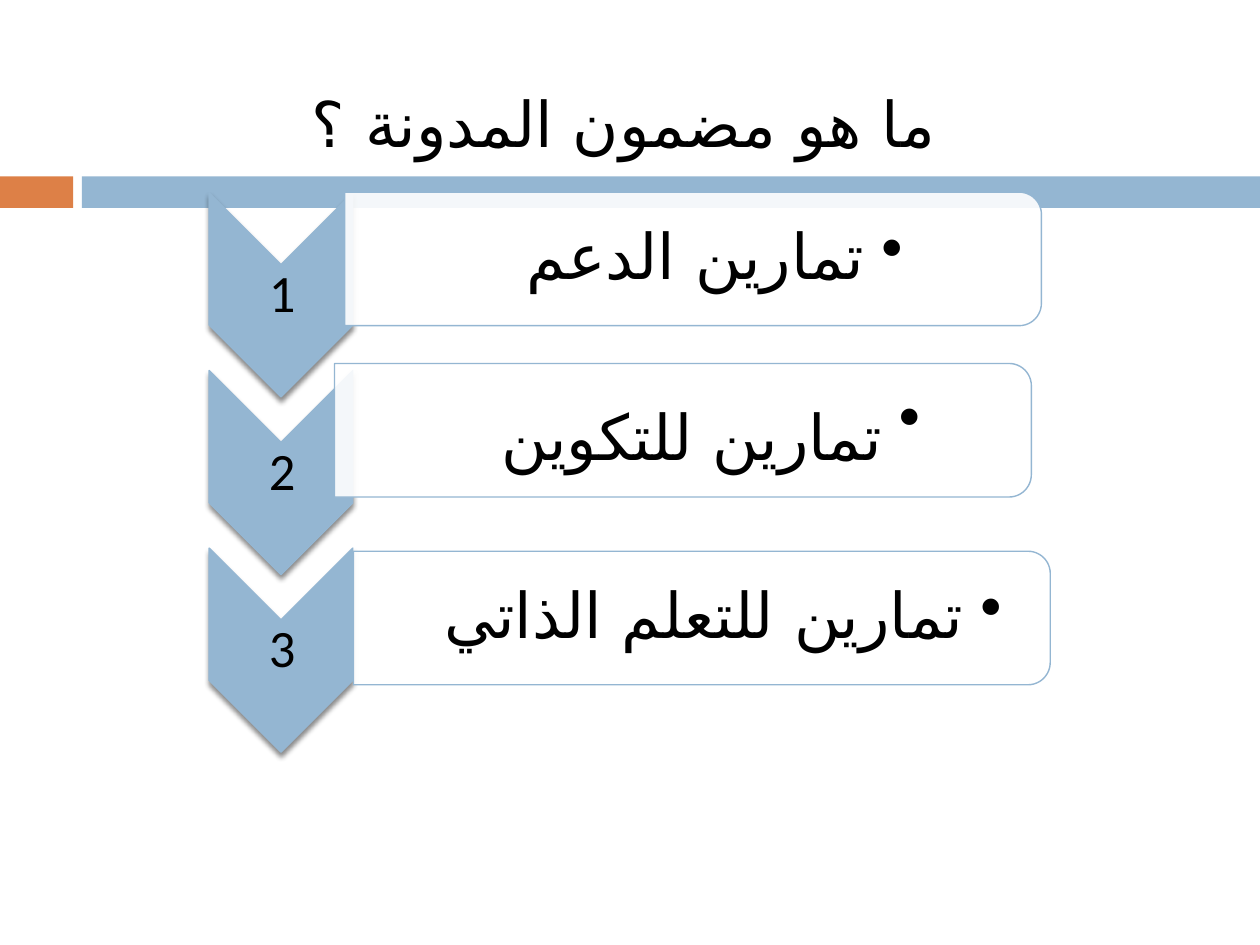
from lxml import etree
from pptx import Presentation
from pptx.dml.color import RGBColor
from pptx.enum.shapes import MSO_SHAPE
from pptx.enum.text import MSO_ANCHOR, PP_ALIGN
from pptx.oxml import parse_xml
from pptx.oxml.ns import nsdecls, qn
from pptx.util import Inches, Pt

BLUE, ORANGE, WHITE, BLACK = "94B6D2", "DD8047", "FFFFFF", "000000"
LATIN_FONT, ARABIC_FONT = "Calibri", "DejaVu Sans"
SHADOW = (
    f'<a:effectLst {nsdecls("a")}><a:outerShdw blurRad="38100" dist="30480" '
    'dir="5400000" rotWithShape="0"><a:srgbClr val="000000">'
    '<a:alpha val="45000"/></a:srgbClr></a:outerShdw></a:effectLst>'
)

presentation = Presentation()
presentation.slide_width = Inches(10)
presentation.slide_height = Inches(7.5)
slide = presentation.slides.add_slide(presentation.slide_layouts[6])


def add_block(kind, box, fill, line=None):
    shape = slide.shapes.add_shape(kind, *map(Inches, box))
    shape.shadow.inherit = False
    shape.fill.solid()
    shape.fill.fore_color.rgb = RGBColor.from_string(fill)
    if line:
        shape.line.color.rgb = RGBColor.from_string(line)
        shape.line.width = Pt(0.79)
    else:
        shape.line.fill.background()
    return shape


def add_text(box, runs, margins, anchor, spacing, indent=0, bullet=None):
    """Add one centred paragraph of (text, size) runs; an indent makes it right-to-left."""
    frame = slide.shapes.add_textbox(*map(Inches, box)).text_frame
    frame.word_wrap = True
    frame.vertical_anchor = anchor
    for side, margin in zip(("left", "top", "right", "bottom"), margins):
        setattr(frame, f"margin_{side}", Inches(margin))
    paragraph = frame.paragraphs[0]
    paragraph.alignment = PP_ALIGN.CENTER
    for name, value in spacing.items():
        setattr(paragraph, name, value)
    for text, size in runs:
        run = paragraph.add_run()
        run.text = text
        run.font.size = Pt(size)
        run.font.name = LATIN_FONT
        run.font.color.rgb = RGBColor.from_string(BLACK)
        etree.SubElement(run.font._element, qn("a:cs"), typeface=ARABIC_FONT)
    if indent:
        properties = paragraph._p.get_or_add_pPr()
        properties.set("rtl", "1")
        properties.set("marL", str(Inches(indent)))
        properties.set("indent", str(-Inches(indent)))
        if bullet:
            etree.SubElement(properties, qn("a:buChar"), char=bullet)


# Header band and title
add_block(MSO_SHAPE.RECTANGLE, (0, 1.4, 0.58, 0.25), ORANGE)
add_block(MSO_SHAPE.RECTANGLE, (0.65, 1.4, 9.35, 0.25), BLUE)
add_text((0.7, 0.62, 8.5, 5.39), [("ما هو مضمون المدونة ؟", 36)],
         (0.1, 0.05, 0.1, 0.05), MSO_ANCHOR.TOP, {"space_before": Pt(7)}, indent=0.35)

# Numbered chevrons, each with its panel: panel left and top, text left and top
rows = [
    ((4.97, -0.71), (2.73, 1.58), [("تمارين الدعم ", 36)]),
    ((4.89, 0.65), (2.66, 2.94), [("تمارين للتكوين", 36), (" ", 54)]),
    ((5.04, 2.14), (2.8, 4.43), [("تمارين للتعلم الذاتي ", 36)]),
]
row_spacing = {"line_spacing": 0.9}
for index, (panel_corner, text_corner, runs) in enumerate(rows):
    offset = 1.41 * index
    chevron = add_block(MSO_SHAPE.CHEVRON, (1.42, 1.77 + offset, 1.62, 1.14), BLUE, BLUE)
    chevron.rotation = 90
    properties = chevron._element.spPr
    properties.replace(properties.find(qn("a:effectLst")), parse_xml(SHADOW))
    add_text((1.67, 2.1 + offset, 1.14, 0.49), [(str(index + 1), 30)],
             (0.02,) * 4, MSO_ANCHOR.MIDDLE, row_spacing)

    panel = add_block(MSO_SHAPE.ROUND_2_SAME_RECTANGLE, (*panel_corner, 1.06, 5.53), WHITE, BLUE)
    panel.rotation = 90
    color = panel._element.spPr.find(qn("a:solidFill"))[0]
    etree.SubElement(color, qn("a:alpha"), val="90000")
    add_text((*text_corner, 5.48, 0.95), runs, (0.28, 0.03, 0.03, 0.03),
             MSO_ANCHOR.MIDDLE, row_spacing, indent=0.31, bullet="•")

presentation.save("out.pptx")
